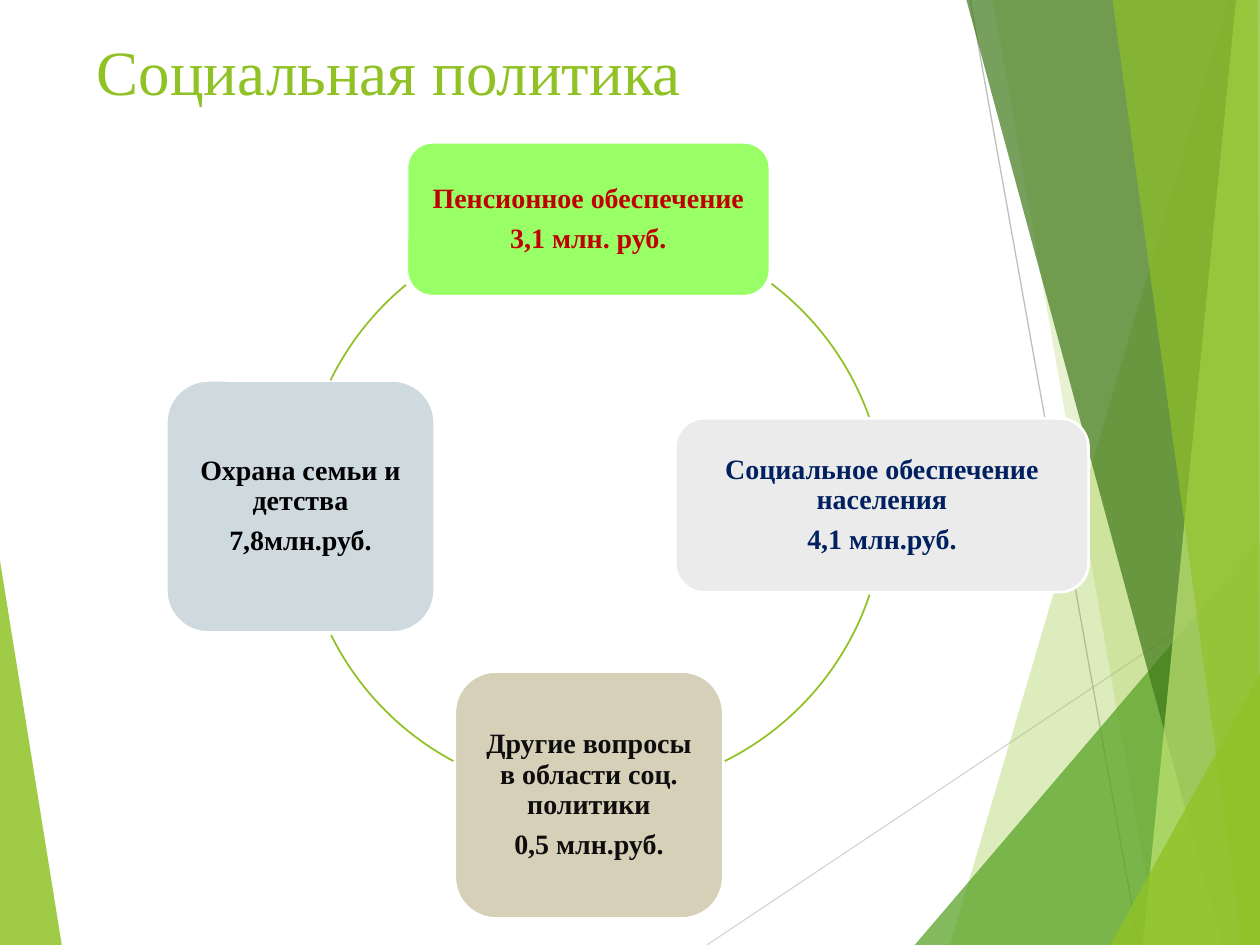
from lxml import etree
from pptx import Presentation
from pptx.dml.color import RGBColor
from pptx.enum.shapes import MSO_CONNECTOR, MSO_SHAPE
from pptx.enum.text import MSO_ANCHOR, PP_ALIGN
from pptx.oxml.ns import qn
from pptx.util import Inches, Pt

LIME = RGBColor(0x90, 0xC2, 0x26)
PALE_LIME = RGBColor(0xC0, 0xE4, 0x74)
GREEN = RGBColor(0x54, 0xA0, 0x21)
DARK_GREEN = RGBColor(0x3F, 0x78, 0x19)
LIGHT_GREY = RGBColor(0xD9, 0xD9, 0xD9)
GREY = RGBColor(0xBF, 0xBF, 0xBF)
WHITE = RGBColor(0xFF, 0xFF, 0xFF)
MINT = RGBColor(0x99, 0xFF, 0x66)
SILVER = RGBColor(0xEB, 0xEB, 0xEB)
SAND = RGBColor(0xD6, 0xD0, 0xB8)
BLUE_GREY = RGBColor(0xCF, 0xDA, 0xDF)
RED = RGBColor(0xC0, 0x00, 0x00)
NAVY = RGBColor(0x00, 0x20, 0x60)
NEAR_BLACK = RGBColor(0x0D, 0x0D, 0x0D)
BLACK = RGBColor(0x00, 0x00, 0x00)

FONT = "Times New Roman"
RING_SIZE = 4.57
# Arc adjustments count 1/100000, angles count 1/60000 of a degree.
ADJUSTMENT_PER_DEGREE = 0.6


def write(frame, lines, *, size, color, bold=False, align=PP_ALIGN.LEFT,
          anchor=MSO_ANCHOR.TOP, line_spacing=1.0, space_after=0, margin=None):
    frame.word_wrap = True
    frame.vertical_anchor = anchor
    if margin is not None:
        frame.margin_left = frame.margin_right = Inches(margin)
        frame.margin_top = frame.margin_bottom = Inches(margin)
    for index, line in enumerate(lines):
        paragraph = frame.add_paragraph() if index else frame.paragraphs[0]
        paragraph.alignment = align
        paragraph.line_spacing = line_spacing
        paragraph.space_after = Pt(space_after)
        run = paragraph.add_run()
        run.text = line
        run.font.name = FONT
        run.font.size = Pt(size)
        run.font.bold = bold
        run.font.color.rgb = color


prs = Presentation()
prs.slide_width, prs.slide_height = Inches(10), Inches(7.5)
slide = prs.slides.add_slide(prs.slide_layouts[6])
shapes = slide.shapes

# Background: two thin lines under translucent facets
for x1, y1, x2, y2, color in [
    (5.61, 7.5, 10, 4.57, LIGHT_GREY),
    (7.7, 0, 9.04, 7.5, GREY),
]:
    ray = shapes.add_connector(MSO_CONNECTOR.STRAIGHT, Inches(x1), Inches(y1),
                               Inches(x2), Inches(y2))
    ray.line.color.rgb = color
    ray.line.width = Pt(0.75)
    etree.SubElement(ray._element.spPr, qn("a:effectLst"))

facets = [
    ([(0, 4.45), (0.49, 7.5), (0, 7.5)], LIME, 85),
    ([(9.75, 0), (7.54, 7.5), (10, 7.5), (10, 0)], LIME, 30),
    ([(7.88, 0), (9.19, 7.5), (10, 7.5), (10, 0)], LIME, 20),
    ([(7.26, 7.5), (10, 4.29), (10, 7.5)], GREEN, 72),
    ([(7.67, 0), (9.7, 7.5), (10, 7.5), (10, 0)], DARK_GREEN, 70),
    ([(9.81, 0), (9.07, 7.5), (10, 7.5), (10, 0)], PALE_LIME, 70),
    ([(8.83, 0), (9.86, 7.5), (10, 7.5), (9.98, 0)], LIME, 65),
    ([(8.81, 7.5), (10, 5.35), (10, 7.5)], LIME, 80),
]
for corners, color, opacity in facets:
    start, *others = [(Inches(x), Inches(y)) for x, y in corners]
    outline = shapes.build_freeform(*start)
    outline.add_line_segments(others, close=True)
    facet = outline.convert_to_shape()
    facet.shadow.inherit = False
    facet.line.fill.background()
    facet.fill.solid()
    facet.fill.fore_color.rgb = color
    color_node = facet._element.spPr.find(".//" + qn("a:srgbClr"))
    etree.SubElement(color_node, qn("a:alpha"), val=str(opacity * 1000))

title = shapes.add_textbox(Inches(0.67), Inches(0.21), Inches(6.94), Inches(1.44))
write(title.text_frame, ["Социальная политика"], size=36, color=LIME)

# Cycle: each spending item, then the arc that leads on from it
cycle = [
    (["Пенсионное обеспечение", "3,1 млн. руб."],
     (3.23, 1.13, 2.88, 1.22), MINT, RED, (2.46, 1.79), (307.1, 340.4)),
    (["Социальное обеспечение населения", "4,1 млн.руб."],
     (5.36, 3.32, 3.28, 1.38), SILVER, NAVY, (2.45, 1.71), (18.5, 63.6)),
    (["Другие вопросы в области соц. политики", "0,5 млн.руб."],
     (3.61, 5.33, 2.13, 1.96), SAND, NEAR_BLACK, (2.39, 1.74), (118.1, 153.6)),
    (["Охрана семьи и детства", "7,8млн.руб."],
     (1.32, 3.02, 2.13, 2), BLUE_GREY, BLACK, (2.39, 1.74), (206.1, 230.5)),
]
for lines, box, fill_color, text_color, ring_corner, angles in cycle:
    item = shapes.add_shape(MSO_SHAPE.ROUNDED_RECTANGLE, *map(Inches, box))
    item.shadow.inherit = False
    item.fill.solid()
    item.fill.fore_color.rgb = fill_color
    item.line.color.rgb = WHITE
    item.line.width = Pt(1.5)
    write(item.text_frame, lines, size=16, color=text_color, bold=True,
          align=PP_ALIGN.CENTER, anchor=MSO_ANCHOR.MIDDLE,
          line_spacing=0.9, space_after=5.6, margin=0.07)

    arc = shapes.add_shape(MSO_SHAPE.ARC, *map(Inches, ring_corner),
                           Inches(RING_SIZE), Inches(RING_SIZE))
    arc.shadow.inherit = False
    arc.fill.background()
    arc.line.color.rgb = LIME
    arc.line.width = Pt(1)
    for index, angle in enumerate(angles):
        arc.adjustments[index] = angle * ADJUSTMENT_PER_DEGREE

prs.save("out.pptx")
